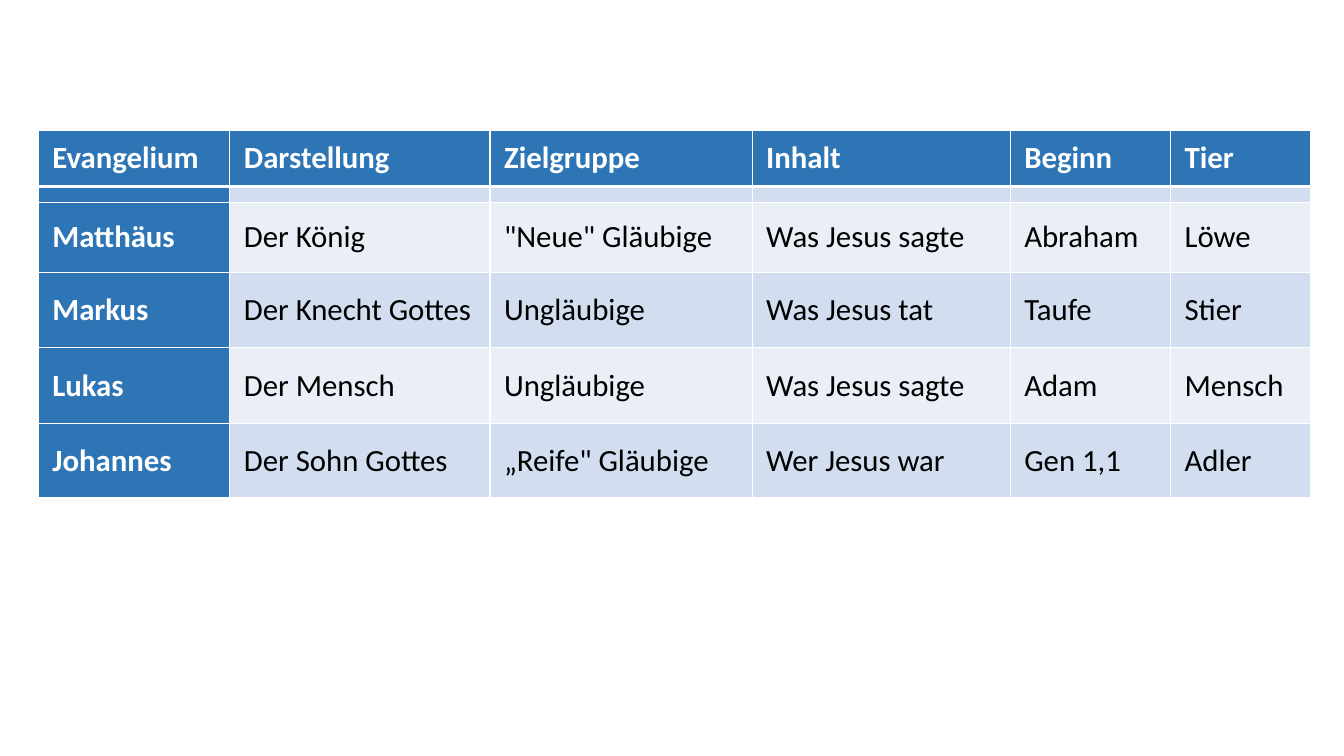
"""Build a slide with a table comparing the four gospels."""
from dataclasses import dataclass

from lxml.etree import SubElement
from pptx import Presentation
from pptx.dml.color import RGBColor
from pptx.enum.text import MSO_ANCHOR, PP_ALIGN
from pptx.oxml.ns import qn
from pptx.util import Inches, Pt

HEADINGS = ("Evangelium", "Darstellung", "Zielgruppe", "Inhalt", "Beginn", "Tier")
GOSPELS = (
    ("Matthäus", "Der König", '"Neue" Gläubige', "Was Jesus sagte", "Abraham", "Löwe"),
    ("Markus", "Der Knecht Gottes", "Ungläubige", "Was Jesus tat", "Taufe", "Stier"),
    ("Lukas", "Der Mensch", "Ungläubige", "Was Jesus sagte", "Adam", "Mensch"),
    ("Johannes", "Der Sohn Gottes", '„Reife" Gläubige', "Wer Jesus war", "Gen 1,1", "Adler"),
)
SPACER = ("",) * len(HEADINGS)
ROWS = (HEADINGS, SPACER, *GOSPELS)
COLUMN_WIDTHS = (1.9, 2.58, 2.6, 2.56, 1.59, 1.39)
ROW_HEIGHTS = (0.56, 0.16, 0.69, 0.75, 0.75, 0.74)
LEFT, TOP = 0.38, 1.29


@dataclass(frozen=True)
class Theme:
    font: str = "Calibri"
    text_size: int = 22
    spacer_size: int = 6
    accent: str = "2E75B6"
    bands: tuple = ("EAEFF7", "D2DEEF")
    light: str = "FFFFFF"
    dark: str = "000000"
    thin: int = 1
    thick: int = 3
    inset: float = 0.14


THEME = Theme()


def add_borders(cell, row):
    """Draw the four cell borders, thick below the headings."""
    widths = {
        "a:lnL": THEME.thin,
        "a:lnR": THEME.thin,
        "a:lnT": THEME.thick if row == 1 else THEME.thin,
        "a:lnB": THEME.thick if row == 0 else THEME.thin,
    }
    properties = cell._tc.get_or_add_tcPr()
    for tag, width in widths.items():
        line = SubElement(properties, qn(tag), w=str(Pt(width)))
        fill = SubElement(line, qn("a:solidFill"))
        SubElement(fill, qn("a:srgbClr"), val=THEME.light)


def fill_cell(cell, text, row, column):
    """Write and format one table cell."""
    is_heading = row == 0 or column == 0
    layout = {
        "margin_left": Inches(THEME.inset),
        "margin_right": Inches(THEME.inset),
        "margin_top": 0,
        "margin_bottom": 0,
        "vertical_anchor": MSO_ANCHOR.MIDDLE,
    }
    for name, value in layout.items():
        setattr(cell, name, value)
    add_borders(cell, row)
    cell.fill.solid()
    cell.fill.fore_color.rgb = RGBColor.from_string(
        THEME.accent if is_heading else THEME.bands[row % 2])

    para = cell.text_frame.paragraphs[0]
    if not text:
        SubElement(para._p, qn("a:endParaRPr"), sz=str(THEME.spacer_size * 100))
        return
    para.alignment = PP_ALIGN.JUSTIFY if row == 0 else PP_ALIGN.LEFT
    span = para.add_run()
    span.text = text
    style = {"name": THEME.font, "size": Pt(THEME.text_size), "bold": is_heading}
    for name, value in style.items():
        setattr(span.font, name, value)
    span.font.color.rgb = RGBColor.from_string(THEME.light if is_heading else THEME.dark)


def main():
    """Create the deck and save it."""
    deck = Presentation()
    deck.slide_width, deck.slide_height = Inches(13.33), Inches(7.5)
    page = deck.slides.add_slide(deck.slide_layouts[6])
    table = page.shapes.add_table(
        len(ROWS), len(HEADINGS), Inches(LEFT), Inches(TOP),
        Inches(sum(COLUMN_WIDTHS)), Inches(sum(ROW_HEIGHTS))).table
    for column, width in zip(table.columns, COLUMN_WIDTHS):
        column.width = Inches(width)
    for row, height in zip(table.rows, ROW_HEIGHTS):
        row.height = Inches(height)
    for row, texts in enumerate(ROWS):
        for column, text in enumerate(texts):
            fill_cell(table.cell(row, column), text, row, column)
    deck.save("out.pptx")


if __name__ == "__main__":
    main()
